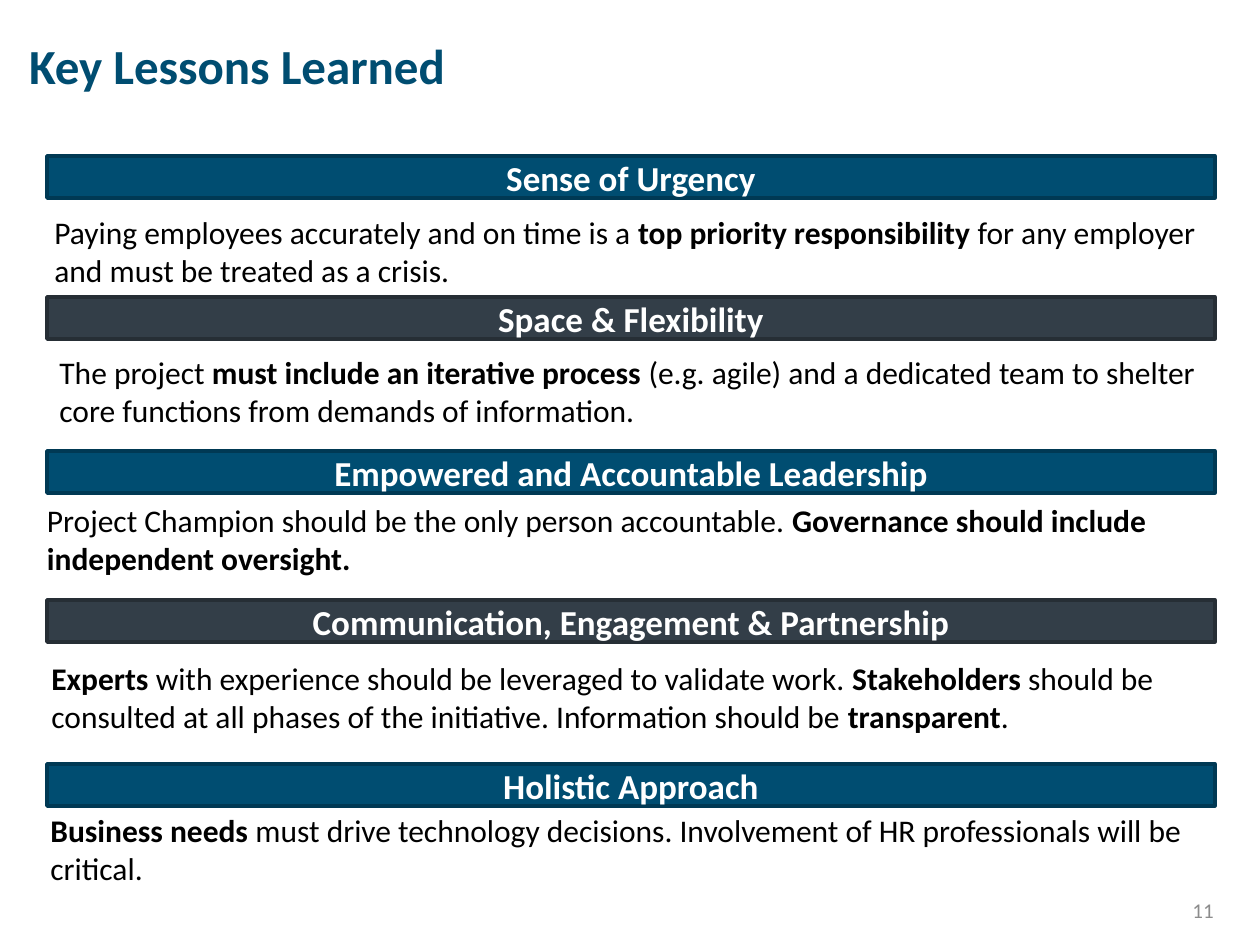
"""Build the Key Lessons Learned slide."""
from pptx import Presentation, util as u
from pptx.dml.color import RGBColor
from pptx.enum import shapes, text

BLUE = RGBColor(0x00, 0x4D, 0x71)
BLUE_EDGE = RGBColor(0x00, 0x39, 0x54)
SLATE = RGBColor(0x33, 0x3E, 0x48)
SLATE_EDGE = RGBColor(0x26, 0x2E, 0x35)
WHITE = RGBColor(0xFF, 0xFF, 0xFF)
BLACK = RGBColor(0x00, 0x00, 0x00)
GREY = RGBColor(0x8C, 0x8C, 0x8C)

EMU_PER_PX = 914400 / 126
BAR_LEFT, BAR_WIDTH, BAR_HEIGHT = 47, 1168, 42
BAR_COLOURS = [(BLUE, BLUE_EDGE), (SLATE, SLATE_EDGE)]

LESSONS = [
    (156, "Sense of Urgency", (42, 207, 1174, 89),
     "Paying employees accurately and on time is a **top priority responsibility **"
     "for any employer and must be treated as a crisis."),
    (297, "Space & Flexibility", (47, 347, 1168, 89),
     "The project **must include an iterative process **(e.g. agile) and a dedicated "
     "team to shelter core functions from demands of information."),
    (451, "Empowered and Accountable Leadership", (42, 486, 1173, 106),
     "Project Champion should be the only person accountable. "
     "**Governance should include independent oversight.**"),
    (600, "Communication, Engagement & Partnership", (39, 653, 1176, 89),
     "**Experts **with experience should be leveraged to validate work. "
     "**Stakeholders** should be consulted at all phases of the initiative. "
     "Information should be **transparent**."),
    (764, "Holistic Approach", (38, 805, 1177, 89),
     "**Business needs **must drive technology decisions. "
     "Involvement of HR professionals will be critical."),
]
PANEL_LESSON = "Empowered and Accountable Leadership"


def px(length):
    return u.Emu(round(length * EMU_PER_PX))


def apply(target, values):
    for name, value in values.items():
        setattr(target, name, value)


class LessonSlide:
    """Holds the text style and the slide being built."""

    font = "Calibri"

    def __init__(self, slide):
        self.slide = slide

    def fill_text(self, holder, wording, size, colour, bold=False, align=None, **frame_format):
        frame = holder.text_frame
        apply(frame, {"word_wrap": True, **frame_format})
        paragraph = frame.paragraphs[0]
        paragraph.alignment = align or text.PP_ALIGN.LEFT
        for index, part in enumerate(wording.split("**")):
            if part:
                run = paragraph.add_run()
                run.text = part
                apply(run.font, {"name": self.font, "size": u.Pt(size),
                                 "bold": bold or index % 2 == 1})
                run.font.color.rgb = colour

    def label(self, box, wording, size, colour, **style):
        holder = self.slide.shapes.add_textbox(*map(px, box))
        self.fill_text(holder, wording, size, colour, **style)

    def bar(self, top, heading, fill, edge):
        box = (BAR_LEFT, top, BAR_WIDTH, BAR_HEIGHT)
        bar = self.slide.shapes.add_shape(shapes.MSO_SHAPE.RECTANGLE, *map(px, box))
        bar.shadow.inherit = False
        bar.fill.solid()
        bar.fill.fore_color.rgb = fill
        bar.line.color.rgb = edge
        bar.line.width = u.Pt(2)
        self.fill_text(bar, heading, 20, WHITE, bold=True, align=text.PP_ALIGN.CENTER,
                       vertical_anchor=text.MSO_ANCHOR.MIDDLE)

    def panel(self, box, wording):
        panel = self.slide.shapes.add_shape(shapes.MSO_SHAPE.ROUNDED_RECTANGLE, *map(px, box))
        panel.adjustments[0] = 0
        panel.shadow.inherit = False
        panel.fill.background()
        panel.line.fill.background()
        self.fill_text(panel, wording, 18, BLACK, margin_left=px(5), margin_right=px(5),
                       vertical_anchor=text.MSO_ANCHOR.MIDDLE)


def main():
    deck = Presentation()
    deck.slide_width, deck.slide_height = px(1260), px(945)
    page = LessonSlide(deck.slides.add_slide(deck.slide_layouts[6]))
    page.label((29, 36, 1076, 62), "Key Lessons Learned", 28, BLUE, bold=True,
               margin_left=0, margin_top=0, margin_right=0, margin_bottom=0)
    page.label((932, 885, 294, 50), "11", 12, GREY, align=text.PP_ALIGN.RIGHT,
               vertical_anchor=text.MSO_ANCHOR.MIDDLE)
    for index, (top, heading, box, lesson) in enumerate(LESSONS):
        page.bar(top, heading, *BAR_COLOURS[index % 2])
        if heading == PANEL_LESSON:
            page.panel(box, lesson)
        else:
            page.label(box, lesson, 18, BLACK,
                       auto_size=text.MSO_AUTO_SIZE.SHAPE_TO_FIT_TEXT)
    deck.save("out.pptx")


if __name__ == "__main__":
    main()
